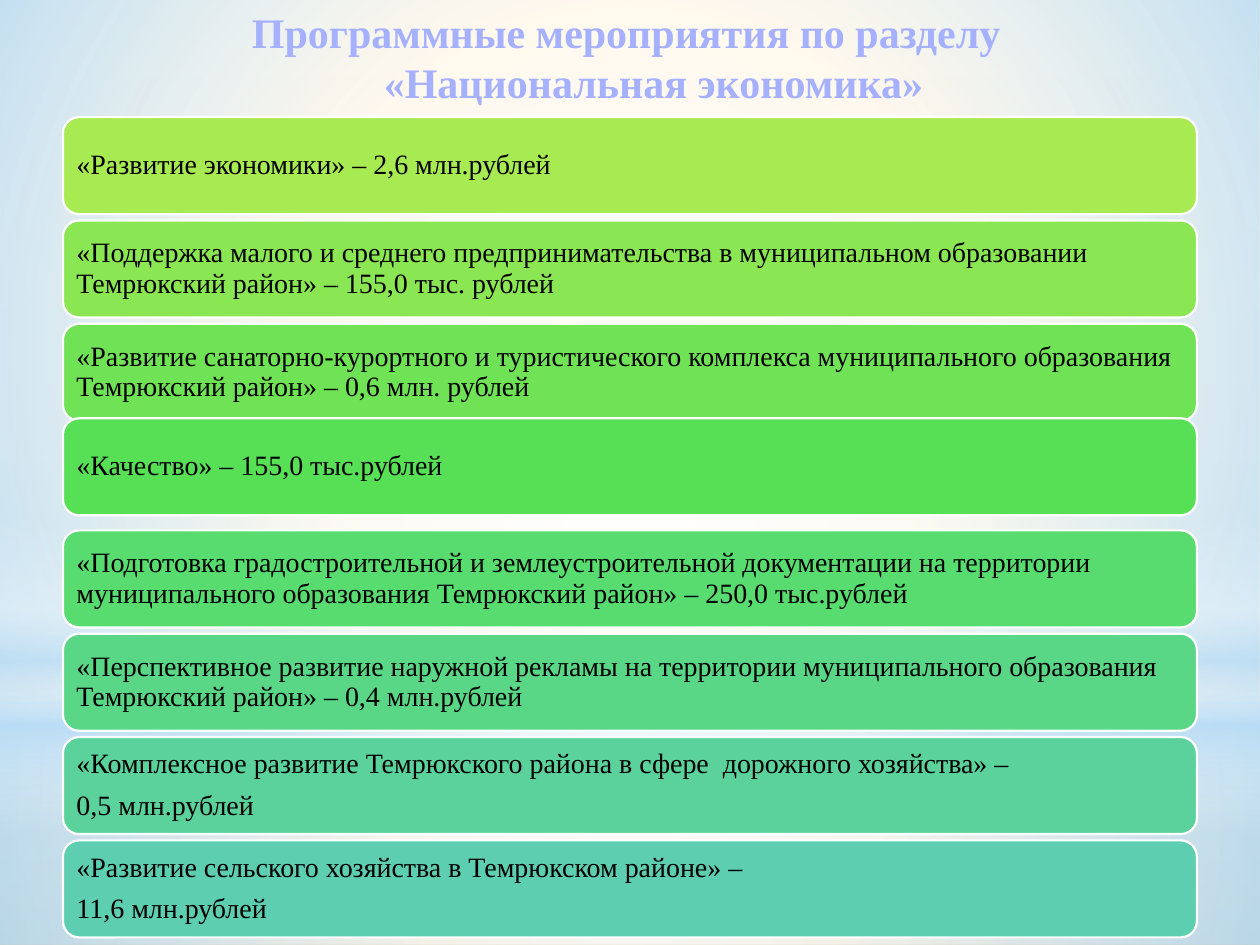
from dataclasses import dataclass

import lxml.etree
import pptx
import pptx.dml.color
import pptx.enum.shapes
import pptx.enum.text
import pptx.oxml.ns
import pptx.util
from pptx.util import Inches

FONT = "Times New Roman"
COLORS = {
    "title": "A5B0FF", "text": "000000", "white": "FFFFFF", "sky": "B4DCFA",
    "cream": "FFEFD1", "ivory": "F0EBD5", "sand": "D1C39F",
}
SHAPES = pptx.enum.shapes.MSO_SHAPE
ROW_TOP, ROW_PITCH = 0.93, 0.82


@dataclass
class Stop:
    position: int
    color: str
    alpha: int = 100


@dataclass
class Backdrop:
    kind: int
    box: tuple[float, float, float, float]
    stops: list[Stop]
    radial: bool = True


@dataclass
class Programme:
    color: str
    lines: list[str]
    shift: float = 0


BACKDROPS = [
    Backdrop(SHAPES.RECTANGLE, (0, 5.58, 10, 1.92),
             [Stop(0, "white", 91), Stop(37, "white", 76), Stop(100, "sky", 79)]),
    Backdrop(SHAPES.RECTANGLE, (0, 0, 10, 5.58),
             [Stop(0, "white", 89), Stop(48, "white", 62), Stop(100, "sky", 79)]),
    Backdrop(SHAPES.RECTANGLE, (0, 4.12, 10, 2.5),
             [Stop(0, "white", 0), Stop(29, "white", 30), Stop(45, "sky", 40),
              Stop(55, "white", 26), Stop(65, "sky", 60), Stop(100, "white", 0)], False),
    Backdrop(SHAPES.OVAL, (0, 1.75, 10, 5.58), [Stop(0, "white"), Stop(56, "white", 0)]),
]

PROGRAMMES = [
    Programme("A7EA52", ["«Развитие экономики» – 2,6 млн.рублей"]),
    Programme("8BE653", ["«Поддержка малого и среднего предпринимательства в муниципальном "
                         "образовании Темрюкский район» – 155,0 тыс. рублей"]),
    Programme("70E255", ["«Развитие санаторно-курортного и туристического комплекса муниципального "
                         "образования Темрюкский район» – 0,6 млн. рублей"]),
    Programme("57DF56", ["«Качество» – 155,0 тыс.рублей"], shift=-0.07),
    Programme("58DB6F", ["«Подготовка градостроительной и землеустроительной документации на территории "
                         "муниципального образования Темрюкский район» – 250,0 тыс.рублей"]),
    Programme("59D686", ["«Перспективное развитие наружной рекламы на территории муниципального "
                         "образования Темрюкский район» – 0,4 млн.рублей"]),
    Programme("5BD29C", ["«Комплексное развитие Темрюкского района в сфере  дорожного хозяйства» –",
                         "0,5 млн.рублей"]),
    Programme("5DCEAF", ["«Развитие сельского хозяйства в Темрюкском районе» –", "11,6 млн.рублей"]),
]


def rgb(value: str) -> pptx.dml.color.RGBColor:
    return pptx.dml.color.RGBColor.from_string(value)


def set_gradient(parent, stops: list[Stop], radial: bool) -> None:
    def add(owner, tag: str, **attributes: str):
        return lxml.etree.SubElement(owner, pptx.oxml.ns.qn(tag), **attributes)

    solid = parent.find(pptx.oxml.ns.qn("a:solidFill"))
    gradient = lxml.etree.Element(pptx.oxml.ns.qn("a:gradFill"), rotWithShape="1")
    stop_list = add(gradient, "a:gsLst")
    for stop in stops:
        mark = add(stop_list, "a:gs", pos=str(stop.position * 1000))
        color = add(mark, "a:srgbClr", val=COLORS[stop.color])
        if stop.alpha < 100:
            add(color, "a:alpha", val=str(stop.alpha * 1000))
    if radial:
        path = add(gradient, "a:path", path="circle")
        add(path, "a:fillToRect", l="50000", t="50000", r="50000", b="50000")
    else:
        add(gradient, "a:lin", ang="5400000", scaled="0")
    parent.replace(solid, gradient)


def add_filled_shape(slide, kind: int, box: tuple[float, float, float, float], color: str):
    shape = slide.shapes.add_shape(kind, *(Inches(value) for value in box))
    shape.shadow.inherit = False
    shape.fill.solid()
    shape.fill.fore_color.rgb = rgb(color)
    return shape


def add_backdrop(slide, backdrop: Backdrop) -> None:
    shape = add_filled_shape(slide, backdrop.kind, backdrop.box, COLORS["white"])
    shape.line.fill.background()
    set_gradient(shape.element.spPr, backdrop.stops, backdrop.radial)


def add_text(paragraph, text: str, size: float, color: str, bold: bool = False) -> None:
    run = paragraph.add_run()
    run.text = text
    run.font.name = FONT
    run.font.size = pptx.util.Pt(size)
    run.font.bold = bold
    run.font.color.rgb = rgb(COLORS[color])


def add_programme(slide, programme: Programme, top: float) -> None:
    shape = add_filled_shape(slide, SHAPES.ROUNDED_RECTANGLE, (0.5, top, 9, 0.77), programme.color)
    shape.line.color.rgb = rgb(COLORS["white"])
    shape.line.width = pptx.util.Pt(1.25)
    frame = shape.text_frame
    frame.word_wrap = True
    frame.vertical_anchor = pptx.enum.text.MSO_ANCHOR.MIDDLE
    frame.margin_left = frame.margin_right = Inches(0.07)
    frame.margin_top = frame.margin_bottom = Inches(0.07)
    for index, line in enumerate(programme.lines):
        paragraph = frame.add_paragraph() if index else frame.paragraphs[0]
        paragraph.alignment = pptx.enum.text.PP_ALIGN.LEFT
        paragraph.line_spacing = 0.9
        paragraph.space_after = pptx.util.Pt(6.4)
        add_text(paragraph, line, 16, "text")


def fill_title(slide) -> None:
    title = slide.shapes.title
    title.left, title.top = Inches(0.47), Inches(0)
    title.width, title.height = Inches(9), Inches(0.87)
    frame = title.text_frame
    frame.auto_size = pptx.enum.text.MSO_AUTO_SIZE.NONE
    frame.vertical_anchor = pptx.enum.text.MSO_ANCHOR.TOP
    paragraph = frame.paragraphs[0]
    paragraph.alignment = pptx.enum.text.PP_ALIGN.CENTER
    properties = paragraph._p.get_or_add_pPr()
    properties.set("marL", str(Inches(0.35)))
    properties.set("indent", str(Inches(-0.35)))
    add_text(paragraph, "Программные мероприятия по разделу", 24, "title", True)
    paragraph.add_line_break()
    add_text(paragraph, " «Национальная экономика»", 24, "title", True)
    slide.shapes.element.append(title.element)


def main() -> None:
    presentation = pptx.Presentation()
    presentation.slide_width, presentation.slide_height = Inches(10), Inches(7.5)
    slide = presentation.slides.add_slide(presentation.slide_layouts[5])
    slide.background.fill.solid()
    background = slide.element.find(".//" + pptx.oxml.ns.qn("p:bgPr"))
    set_gradient(background, [Stop(0, "cream"), Stop(65, "ivory"), Stop(100, "sand")], False)
    for backdrop in BACKDROPS:
        add_backdrop(slide, backdrop)
    fill_title(slide)
    for index, programme in enumerate(PROGRAMMES):
        add_programme(slide, programme, ROW_TOP + index * ROW_PITCH + programme.shift)
    presentation.save("out.pptx")


if __name__ == "__main__":
    main()
